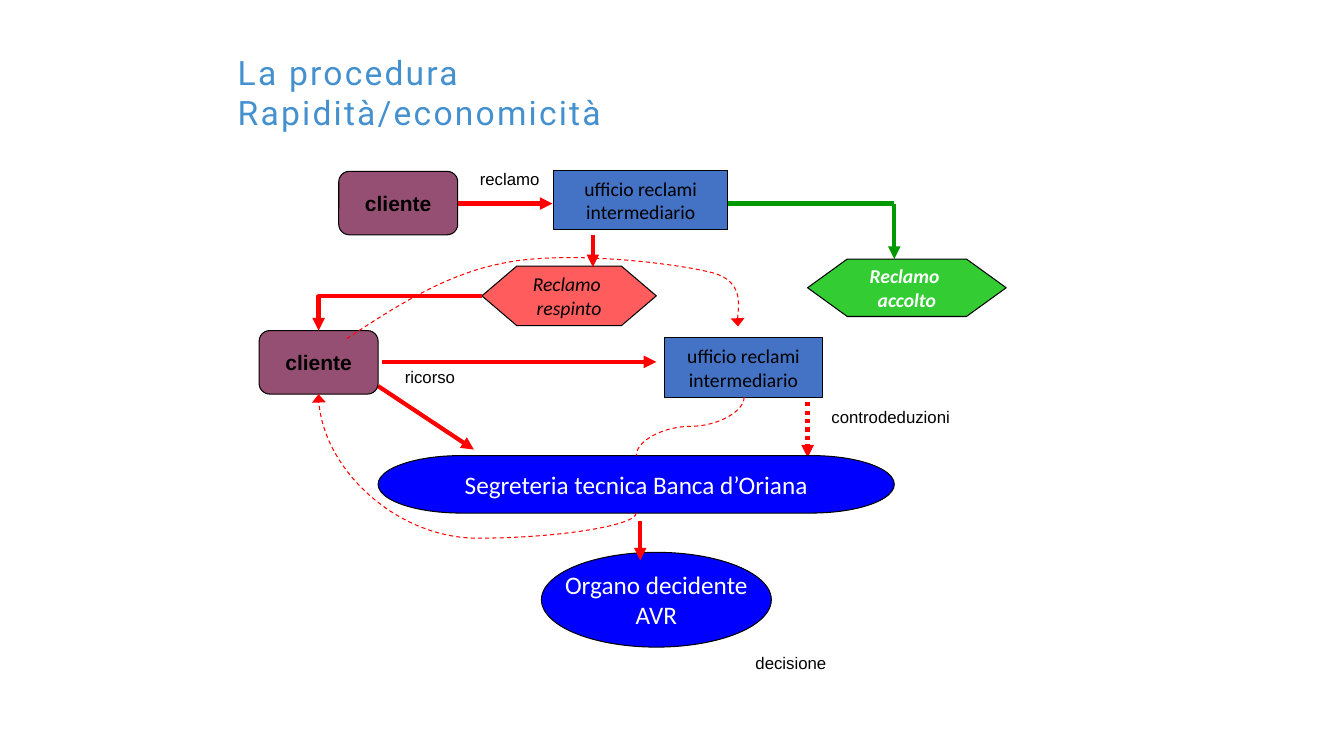
from math import cos, radians, sin

from lxml import etree
from pptx import Presentation
from pptx.dml.color import RGBColor
from pptx.enum import dml, shapes, text
from pptx.oxml.ns import qn
from pptx.util import Inches, Pt

BLACK = RGBColor(0, 0, 0)
WHITE = RGBColor(255, 255, 255)
RED = RGBColor(255, 0, 0)
GREEN = RGBColor(0, 0x99, 0)
LIME = RGBColor(0x33, 0xCC, 0x33)
CORAL = RGBColor(0xFF, 0x5D, 0x5D)
PLUM = RGBColor(0x95, 0x4F, 0x72)
STEEL = RGBColor(0x44, 0x72, 0xC4)
BLUE = RGBColor(0, 0, 255)
SKY = RGBColor(0x45, 0x91, 0xCF)

KIND = shapes.MSO_SHAPE
LINK = shapes.MSO_CONNECTOR
DASH = dml.MSO_LINE
OFFICE = "ufficio reclami intermediario"
THIN = 0.75
GRID = 1000


def write(shape, words, size, face, color, bold=False, italic=False,
          align=text.PP_ALIGN.CENTER, wrap=True):
    frame = shape.text_frame
    frame.word_wrap = wrap
    frame.vertical_anchor = text.MSO_ANCHOR.MIDDLE
    frame.text = words
    for para in frame.paragraphs:
        para.alignment = align
        font = para.font
        font.size, font.name = Pt(size), face
        font.bold, font.italic = bold, italic
        font.color.rgb = color


def node(slide, kind, box, fill, words, size=14, face="Calibri",
         color=BLACK, **style):
    shape = slide.shapes.add_shape(kind, *map(Inches, box))
    shape.shadow.inherit = False
    shape.fill.solid()
    shape.fill.fore_color.rgb = fill
    shape.line.color.rgb = BLACK
    shape.line.width = Pt(THIN)
    write(shape, words, size, face, color, **style)


def label(slide, box, words):
    area = slide.shapes.add_textbox(*map(Inches, box))
    write(area, words, 12, "Arial", BLACK)


def title(slide, box):
    area = slide.shapes.add_textbox(*map(Inches, box))
    write(area, "La procedura\nRapidità/economicità", 24, "Roboto", SKY,
          align=text.PP_ALIGN.LEFT)
    for para in area.text_frame.paragraphs:
        for run in para.runs:
            run._r.get_or_add_rPr().set("spc", "160")


def stroke(shape, color, width, dash, head):
    line = shape.line
    line.color.rgb = color
    line.width = Pt(width)
    if dash:
        line.dash_style = dash
    if head:
        tip = etree.SubElement(line._get_or_add_ln(), qn("a:tailEnd"))
        tip.set("type", "triangle")
        if width == THIN:
            tip.set("w", "lg")


def arrow(slide, start, end, color=RED, width=3, dash=None, head=True,
          kind=LINK.STRAIGHT, turn=0, preset=None, bend=None):
    mid = [(a + b) / 2 for a, b in zip(start, end)]
    c, s = cos(radians(turn)), sin(radians(turn))
    ends = []
    for x, y in (start, end):
        dx, dy = x - mid[0], y - mid[1]
        ends += [mid[0] + dx * c + dy * s, mid[1] - dx * s + dy * c]
    link = slide.shapes.add_connector(kind, *map(Inches, ends))
    props = link._element.spPr
    if turn:
        props.find(qn("a:xfrm")).set("rot", str(turn * 60000))
    shape = props.find(qn("a:prstGeom"))
    if preset:
        shape.set("prst", preset)
    if bend is not None:
        guide = etree.SubElement(shape.find(qn("a:avLst")), qn("a:gd"))
        guide.set("name", "adj1")
        guide.set("fmla", f"val {bend}")
    stroke(link, color, width, dash, head)
    etree.SubElement(props, qn("a:effectLst"))


def sweep(slide, start, curves):
    points = [start]
    for one, two, end in curves:
        last = points[-1]
        for n in range(1, 25):
            t = n / 24
            points.append([
                (1 - t) ** 3 * a + 3 * (1 - t) ** 2 * t * b
                + 3 * (1 - t) * t ** 2 * c + t ** 3 * d
                for a, b, c, d in zip(last, one, two, end)])
    first, *rest = [[round(v * GRID) for v in point] for point in points]
    pen = slide.shapes.build_freeform(*first, scale=Inches(1) / GRID)
    pen.add_line_segments(rest, close=False)
    shape = pen.convert_to_shape()
    shape.shadow.inherit = False
    shape.fill.background()
    stroke(shape, RED, THIN, DASH.DASH, True)


def client(slide, left, top):
    node(slide, KIND.FLOWCHART_ALTERNATE_PROCESS, (left, top, 1.18, 0.63),
         PLUM, "cliente", 15, "Arial", bold=True)


def claim(slide):
    client(slide, 3.36, 1.7)
    arrow(slide, (4.54, 2.02), (5.48, 2.02))
    arrow(slide, (7.22, 2.02), (8.87, 2.02), GREEN, head=False)
    arrow(slide, (8.87, 2.02), (8.87, 2.57), GREEN)
    label(slide, (4.62, 1.62, 0.87, 0.3), "reclamo")
    node(slide, KIND.FLOWCHART_PREPARATION, (4.78, 2.64, 1.73, 0.59),
         CORAL, "Reclamo \nrespinto", italic=True)
    node(slide, KIND.FLOWCHART_PROCESS, (5.49, 1.69, 1.73, 0.59),
         STEEL, OFFICE)
    node(slide, KIND.FLOWCHART_PREPARATION, (8.01, 2.57, 1.97, 0.57),
         LIME, "Reclamo \naccolto", color=WHITE, bold=True, italic=True)


def appeal(slide):
    arrow(slide, (3.79, 3.59), (6.51, 3.59))
    arrow(slide, (3.75, 3.83), (4.7, 4.46))
    arrow(slide, (8.01, 3.99), (8.01, 4.54), dash=DASH.ROUND_DOT)
    label(slide, (3.83, 3.59, 0.87, 0.3), "ricorso")
    label(slide, (8.05, 3.99, 1.57, 0.3), "controdeduzioni")
    client(slide, 2.57, 3.28)
    node(slide, KIND.FLOWCHART_PROCESS, (6.59, 3.35, 1.57, 0.59),
         STEEL, OFFICE)
    node(slide, KIND.FLOWCHART_TERMINATOR, (3.75, 4.52, 5.12, 0.57),
         BLUE, "Segreteria tecnica Banca d’Oriana", 18, color=WHITE)
    sweep(slide, (3.44, 3.36), [
        ((3.94, 3.03), (4.45, 2.7), (5.05, 2.6)),
        ((5.66, 2.49), (6.7, 2.61), (7.08, 2.71)),
        ((7.45, 2.82), (7.28, 3.16), (7.32, 3.24))])
    arrow(slide, (4.78, 2.94), (3.16, 3.28), kind=LINK.ELBOW, turn=180,
          preset="bentConnector2")
    arrow(slide, (5.88, 2.33), (5.88, 2.65))


def ruling(slide):
    arrow(slide, (7.38, 3.94), (6.31, 4.52), width=THIN, dash=DASH.DASH,
          head=False, kind=LINK.CURVE, turn=90, bend=50000)
    arrow(slide, (6.31, 5.09), (3.16, 3.91), width=THIN, dash=DASH.DASH,
          kind=LINK.CURVE, turn=90, bend=-21100)
    node(slide, KIND.OVAL, (5.37, 5.48, 2.28, 0.94), BLUE,
         "Organo decidente\nAVR", 18, color=WHITE, wrap=False)
    arrow(slide, (6.35, 5.17), (6.35, 5.56))
    label(slide, (7.06, 6.43, 1.57, 0.3), "decisione")


def main():
    deck = Presentation()
    deck.slide_width, deck.slide_height = Inches(13.33), Inches(7.5)
    slide = deck.slides.add_slide(deck.slide_layouts[6])
    claim(slide)
    appeal(slide)
    title(slide, (2.26, 0.44, 7.8, 0.95))
    ruling(slide)
    deck.save("out.pptx")


if __name__ == "__main__":
    main()
